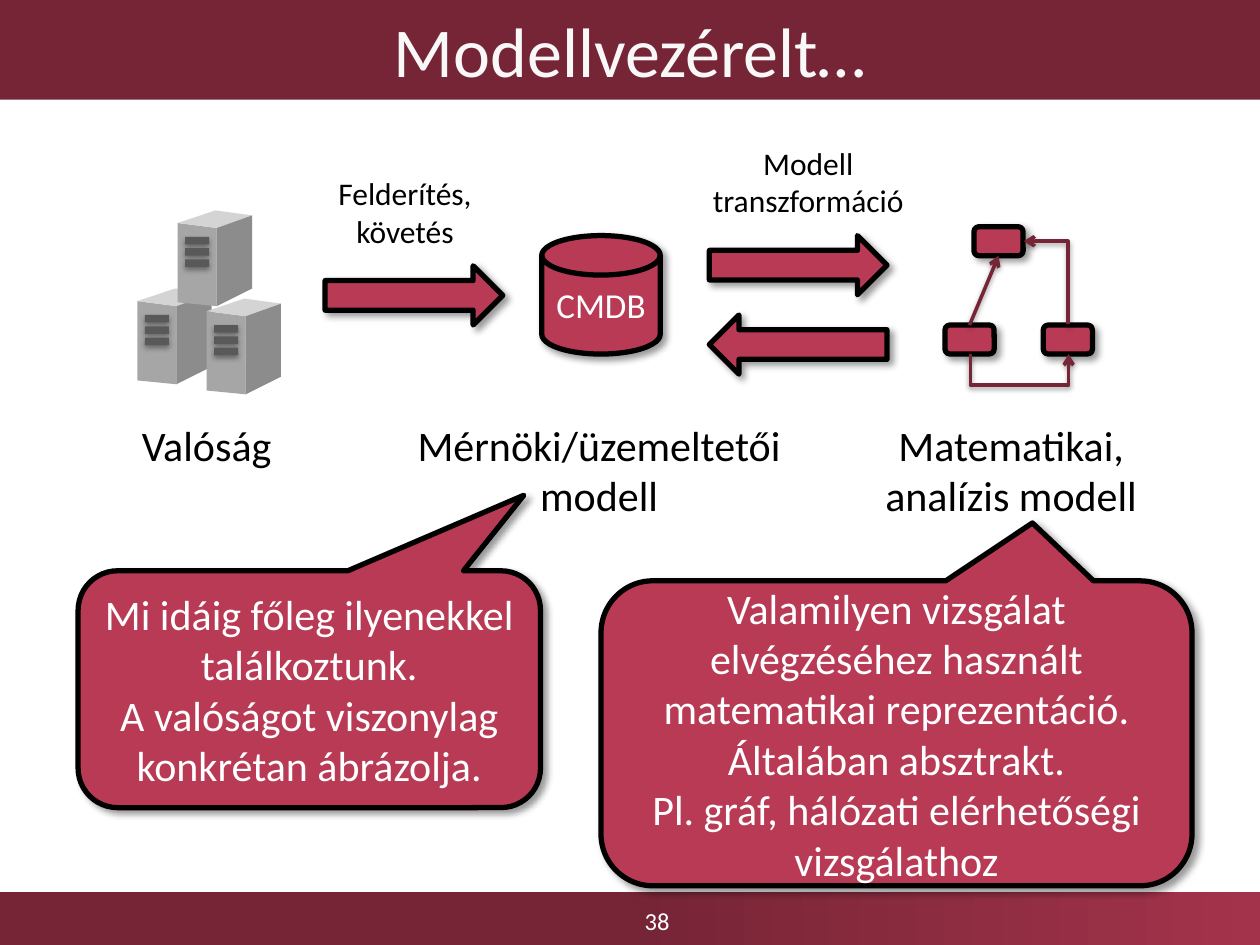
from dataclasses import dataclass

import pptx
import pptx.dml.color
import pptx.enum.dml
import pptx.enum.shapes
import pptx.enum.text
import pptx.oxml
import pptx.oxml.ns
import pptx.util
from pptx.dml.color import RGBColor
from pptx.enum.shapes import MSO_CONNECTOR, MSO_SHAPE
from pptx.util import Inches, Pt

FONT = "Calibri"
WINE = RGBColor(0x76, 0x25, 0x36)
LIGHT_WINE = RGBColor(0xA3, 0x33, 0x4B)
RASPBERRY = RGBColor(0xB8, 0x3A, 0x55)
BLACK = RGBColor(0, 0, 0)
WHITE = RGBColor(0xFF, 0xFF, 0xFF)
OFF_WHITE = RGBColor(0xF8, 0xF8, 0xF8)
SERVER_FRONT = RGBColor(0xA6, 0xA6, 0xA6)
SERVER_SIDE = RGBColor(0x8C, 0x8C, 0x8C)
SERVER_TOP = RGBColor(0xD4, 0xD4, 0xD4)
SERVER_SLOT = RGBColor(0x59, 0x59, 0x59)


@dataclass(frozen=True)
class Box:
    left: float
    top: float
    width: float
    height: float

    def lengths(self) -> tuple:
        return tuple(map(Inches, (self.left, self.top, self.width, self.height)))


@dataclass(frozen=True)
class Label:
    text: str
    box: Box
    size: int
    color: RGBColor = BLACK


@dataclass(frozen=True)
class Callout:
    text: str
    box: Box
    adjustments: tuple


LABELS = [
    Label("Valóság", Box(1.02, 3.28, 1.24, 0.5), 24),
    Label("Mérnöki/üzemeltetői\vmodell", Box(3.2, 3.28, 3.11, 0.91), 24),
    Label("Matematikai,\vanalízis modell", Box(6.88, 3.28, 2.29, 0.91), 24),
    Label("Felderítés,\vkövetés", Box(2.58, 1.33, 1.27, 0.71), 18),
    Label("Modell\ntranszformáció", Box(5.55, 1.09, 1.73, 0.71), 18),
]
CALLOUTS = [
    Callout("Mi idáig főleg ilyenekkel találkoztunk.\n"
            "A valóságot viszonylag konkrétan ábrázolja.",
            Box(0.62, 4.53, 3.67, 1.88), (0.464, -0.819, 0.167)),
    Callout("Valamilyen vizsgálat elvégzéséhez használt matematikai reprezentáció. "
            "Általában absztrakt.\nPl. gráf, hálózati elérhetőségi vizsgálathoz",
            Box(4.77, 4.61, 4.69, 2.42), (0.23, -0.69, 0.17)),
]
SERVER_CORNERS = [(1.09, 2.42), (1.64, 2.5), (1.41, 1.8)]


def add_shadow(shape, alpha: int, blur: float, distance: float, angle: int) -> None:
    shape._element.spPr.append(pptx.oxml.parse_xml(
        f'<a:effectLst {pptx.oxml.ns.nsdecls("a")}>'
        f'<a:outerShdw blurRad="{Pt(blur)}" dist="{Pt(distance)}" dir="{angle * 60000}"'
        f' rotWithShape="0"><a:srgbClr val="000000"><a:alpha val="{alpha * 1000}"/>'
        '</a:srgbClr></a:outerShdw></a:effectLst>'))


def add_line_end(line, tag: str, **attributes: str) -> None:
    element = line._get_or_add_ln().makeelement(pptx.oxml.ns.qn(tag), attributes)
    line._get_or_add_ln().append(element)


def write_text(shape, text: str, size: int, color: RGBColor) -> None:
    frame = shape.text_frame
    frame.text = text
    frame.vertical_anchor = pptx.enum.text.MSO_ANCHOR.MIDDLE
    for paragraph in frame.paragraphs:
        paragraph.alignment = pptx.enum.text.PP_ALIGN.CENTER
        for run in paragraph.runs:
            run.font.name = FONT
            run.font.size = Pt(size)
            run.font.color.rgb = color


def add_label(slide, label: Label) -> None:
    shape = slide.shapes.add_textbox(*label.box.lengths())
    write_text(shape, label.text, label.size, label.color)
    shape.text_frame.word_wrap = False
    shape.text_frame.vertical_anchor = pptx.enum.text.MSO_ANCHOR.TOP
    shape.text_frame.auto_size = pptx.enum.text.MSO_AUTO_SIZE.SHAPE_TO_FIT_TEXT


def add_outlined(slide, kind: MSO_SHAPE, box: Box, text: str = "", size: int = 24):
    shape = slide.shapes.add_shape(kind, *box.lengths())
    shape.fill.solid()
    shape.fill.fore_color.rgb = RASPBERRY
    shape.line.color.rgb = BLACK
    shape.line.width = Pt(3)
    add_line_end(shape.line, "a:round")
    add_shadow(shape, 40, 4, 3, 45)
    if text:
        write_text(shape, text, size, WHITE)
    return shape


def fill_plain(shape, color: RGBColor) -> None:
    shape.shadow.inherit = False
    shape.fill.solid()
    shape.fill.fore_color.rgb = color
    shape.line.fill.background()


def add_server(slide, left: float, top: float) -> None:
    group = slide.shapes.add_group_shape()
    # Corners relative to the server: front face, then the back edge
    front = [(0, -0.03), (0.31, 0.01), (0.31, 0.63), (0, 0.6)]
    back_left, back_top, back_bottom = (0.3, -0.13), (0.59, -0.09), (0.59, 0.49)
    faces = [
        (front, SERVER_FRONT),
        ([front[0], back_left, back_top, front[1]], SERVER_TOP),
        ([front[1], back_top, back_bottom, front[2]], SERVER_SIDE),
    ]
    for corners, color in faces:
        points = [(Inches(left + x), Inches(top + y)) for x, y in corners]
        builder = group.shapes.build_freeform(*points[0])
        builder.add_line_segments(points[1:], close=True)
        fill_plain(builder.convert_to_shape(), color)
    for row in range(3):
        box = Box(left + 0.06, top + 0.08 + row * 0.09, 0.19, 0.06)
        slot = group.shapes.add_shape(MSO_SHAPE.RECTANGLE, *box.lengths())
        slot.fill.solid()
        slot.fill.fore_color.rgb = SERVER_SLOT
        slot.line.fill.background()
        add_shadow(slot, 38, 3.1, 1.6, 90)


def connect(slide, kind: MSO_CONNECTOR, start, start_site: int, end, end_site: int):
    connector = slide.shapes.add_connector(kind, 0, 0, 0, 0)
    connector.begin_connect(start, start_site)
    connector.end_connect(end, end_site)
    connector.line.color.rgb = WINE
    connector.line.width = Pt(2)
    add_line_end(connector.line, "a:tailEnd", type="arrow")
    add_shadow(connector, 38, 3.1, 1.6, 90)
    return connector


def route_upright(connector, box: Box, preset: str, flip: str) -> None:
    """Turn an elbow by 270 degrees so that it leaves its node vertically."""
    connector.left, connector.top, connector.width, connector.height = box.lengths()
    properties = connector._element.spPr
    frame = properties.find(pptx.oxml.ns.qn("a:xfrm"))
    for name in ("flipH", "flipV"):
        frame.set(name, "1" if name == flip else "0")
    frame.set("rot", str(270 * 60000))
    properties.find(pptx.oxml.ns.qn("a:prstGeom")).set("prst", preset)


def add_graph(slide) -> None:
    left_node, right_node, top_node = [
        add_outlined(slide, MSO_SHAPE.ROUNDED_RECTANGLE, Box(left, top, 0.39, 0.23))
        for left, top in [(7.5, 2.58), (8.28, 2.58), (7.73, 1.8)]
    ]
    connect(slide, MSO_CONNECTOR.STRAIGHT, left_node, 0, top_node, 2)
    corner = connect(slide, MSO_CONNECTOR.ELBOW, right_node, 0, top_node, 3)
    route_upright(corner, Box(7.97, 2.07, 0.66, 0.35), "bentConnector2", "flipV")
    loop = connect(slide, MSO_CONNECTOR.ELBOW, left_node, 2, right_node, 2)
    depth, thickness = 0.25, 0.002
    route_upright(loop, Box(8.09, 2.42, thickness, 0.78), "bentConnector3", "flipH")
    geometry = loop._element.spPr.find(pptx.oxml.ns.qn("a:prstGeom"))
    guides = geometry.get_or_add_avLst()
    guides.append(guides.makeelement(pptx.oxml.ns.qn("a:gd"), {
        "name": "adj1", "fmla": f"val {round(depth / thickness * 100000)}"}))


def main() -> None:
    presentation = pptx.Presentation()
    presentation.slide_width, presentation.slide_height = Inches(10), Inches(7.5)
    slide = presentation.slides.add_slide(presentation.slide_layouts[5])

    # Title band
    title = slide.shapes.title
    title.left, title.top, title.width, title.height = Box(0, 0, 10, 0.79).lengths()
    title.fill.solid()
    title.fill.fore_color.rgb = WINE
    write_text(title, "Modellvezérelt…", 40, OFF_WHITE)

    # Footer band and page number
    footer = slide.shapes.add_shape(MSO_SHAPE.RECTANGLE, *Box(0, 7.08, 10, 0.42).lengths())
    fill_plain(footer, WINE)
    footer.fill.gradient()
    footer.fill.gradient_angle = 0
    first, last = footer.fill.gradient_stops
    first.color.rgb, first.position = WINE, 0.5
    last.color.rgb, last.position = LIGHT_WINE, 1
    number = slide.shapes.add_textbox(*Box(3.59, 7.11, 3.25, 0.39).lengths())
    write_text(number, "38", 14, WHITE)

    # Reality, engineering model and mathematical model
    add_outlined(slide, MSO_SHAPE.FLOWCHART_MAGNETIC_DISK, Box(4.3, 1.87, 0.94, 0.94), "CMDB", 20
                 ).text_frame.word_wrap = False
    for left, top in SERVER_CORNERS:
        add_server(slide, left, top)
    add_graph(slide)

    # Arrows between the models
    for left, top in [(2.58, 2.11), (5.63, 1.87), (5.63, 2.5)]:
        arrow = add_outlined(slide, MSO_SHAPE.RIGHT_ARROW, Box(left, top, 1.41, 0.47))
    arrow._element.spPr.find(pptx.oxml.ns.qn("a:xfrm")).set("flipH", "1")

    # Captions and callouts
    for label in LABELS:
        add_label(slide, label)
    for callout in CALLOUTS:
        shape = add_outlined(slide, MSO_SHAPE.ROUNDED_RECTANGULAR_CALLOUT, callout.box, callout.text)
        for index, value in enumerate(callout.adjustments):
            shape.adjustments[index] = value

    presentation.save("out.pptx")


if __name__ == "__main__":
    main()
